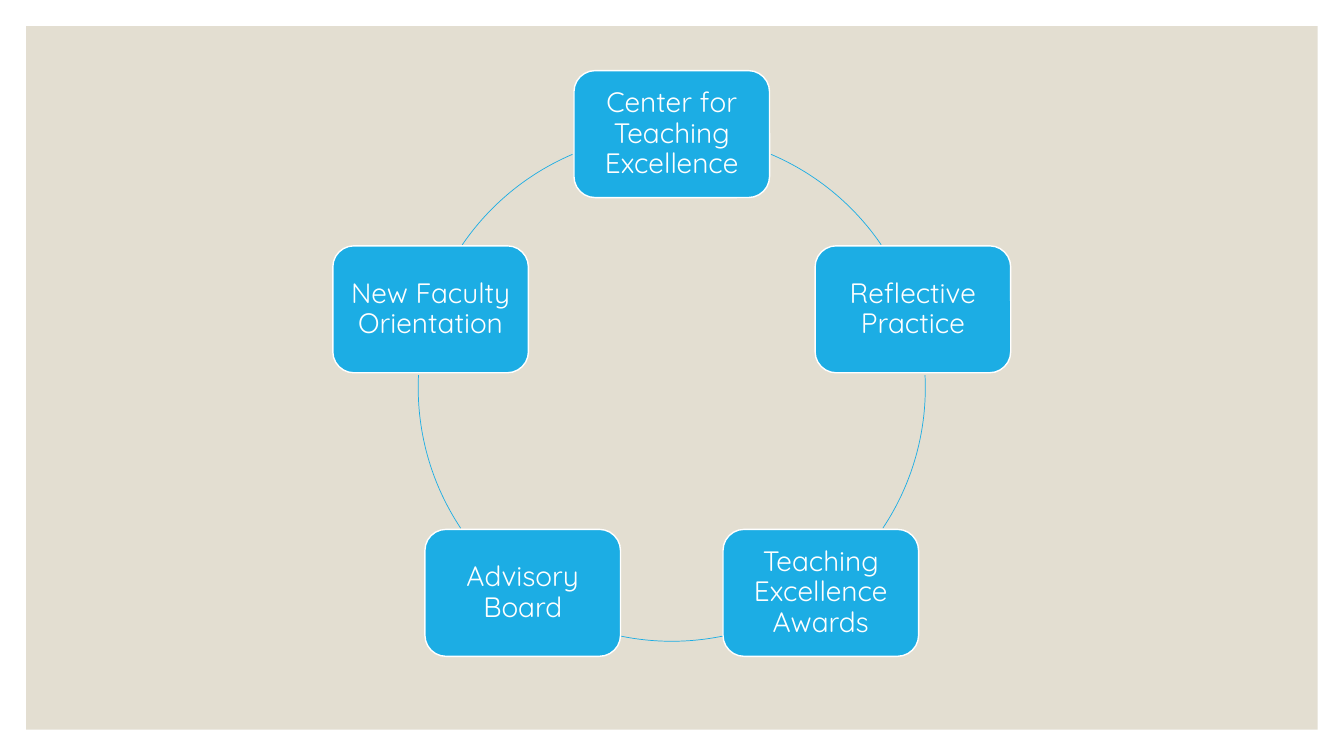
from dataclasses import dataclass
from math import cos, radians, sin

from pptx import Presentation
from pptx.dml.color import RGBColor
from pptx.enum.shapes import MSO_SHAPE
from pptx.enum.text import MSO_ANCHOR, PP_ALIGN
from pptx.util import Cm, Pt

RECTANGLE = MSO_SHAPE.RECTANGLE
ROUNDED = MSO_SHAPE.ROUNDED_RECTANGLE
ARC = MSO_SHAPE.ARC
MIDDLE = MSO_ANCHOR.MIDDLE
CENTER = PP_ALIGN.CENTER


@dataclass(frozen=True)
class Theme:
    panel: RGBColor = RGBColor(0xE3, 0xDE, 0xD1)
    accent: RGBColor = RGBColor(0x1C, 0xAD, 0xE4)
    white: RGBColor = RGBColor(0xFF, 0xFF, 0xFF)
    font: str = "Quicksand"
    text_size: Pt = Pt(20)
    border: Pt = Pt(1)
    arc_line: Pt = Pt(0.5)


THEME = Theme()
SLIDE_WIDTH, SLIDE_HEIGHT = 33.87, 19.05
MARGIN = 0.66
NODE_WIDTH, NODE_HEIGHT = 4.93, 3.2
NODE_INSET = 0.2
RING_BOX = (10.54, 3.38, 12.78, 12.78)

# Each program is followed clockwise by an arc: start and end angle in degrees.
PROGRAMS = [
    ("Center for Teaching Excellence", 293.05, 325.7),
    ("Reflective Practice", 357.15, 33.66),
    ("Teaching Excellence Awards", 78.47, 101.53),
    ("Advisory Board", 146.34, 182.85),
    ("New Faculty Orientation", 214.3, 246.95),
]


def add_plain_shape(page, kind, box):
    shape = page.shapes.add_shape(kind, *(Cm(length) for length in box))
    shape.shadow.inherit = False
    return shape


def add_panel(page, box):
    panel = add_plain_shape(page, RECTANGLE, box)
    panel.fill.solid()
    panel.fill.fore_color.rgb = THEME.panel
    panel.line.fill.background()


def add_node(page, box, label):
    node = add_plain_shape(page, ROUNDED, box)
    node.fill.solid()
    node.fill.fore_color.rgb = THEME.accent
    node.line.color.rgb = THEME.white
    node.line.width = THEME.border

    frame = node.text_frame
    frame.word_wrap = True
    frame.vertical_anchor = MIDDLE
    frame.margin_left = frame.margin_right = Cm(NODE_INSET)
    frame.margin_top = frame.margin_bottom = Cm(NODE_INSET)
    para = frame.paragraphs[0]
    para.alignment = CENTER
    para.line_spacing = 0.9
    span = para.add_run()
    span.text = label
    span.font.name = THEME.font
    span.font.size = THEME.text_size
    span.font.color.rgb = THEME.white


def add_arc(page, box, start, end):
    arc = add_plain_shape(page, ARC, box)
    arc.fill.background()
    arc.line.color.rgb = THEME.accent
    arc.line.width = THEME.arc_line
    # Angles are stored in 1/60000 degree, adjustments in 1/100000.
    arc.adjustments[0] = start * 0.6
    arc.adjustments[1] = end * 0.6


def add_cycle(page, box, programs):
    """Spread the programs evenly around the ring in the box, from the top."""
    left, top, width, height = box
    for index, (label, start, end) in enumerate(programs):
        angle = radians(360 * index / len(programs) - 90)
        center_x = left + width / 2 * (1 + cos(angle))
        center_y = top + height / 2 * (1 + sin(angle))
        node_box = (center_x - NODE_WIDTH / 2, center_y - NODE_HEIGHT / 2,
                    NODE_WIDTH, NODE_HEIGHT)
        add_node(page, node_box, label)
        add_arc(page, box, start, end)


def main():
    deck = Presentation()
    deck.slide_width, deck.slide_height = Cm(SLIDE_WIDTH), Cm(SLIDE_HEIGHT)
    page = deck.slides.add_slide(deck.slide_layouts[6])
    add_panel(page, (MARGIN, MARGIN,
                     SLIDE_WIDTH - 2 * MARGIN, SLIDE_HEIGHT - 2 * MARGIN))
    add_cycle(page, RING_BOX, PROGRAMS)
    deck.save("out.pptx")


if __name__ == "__main__":
    main()
